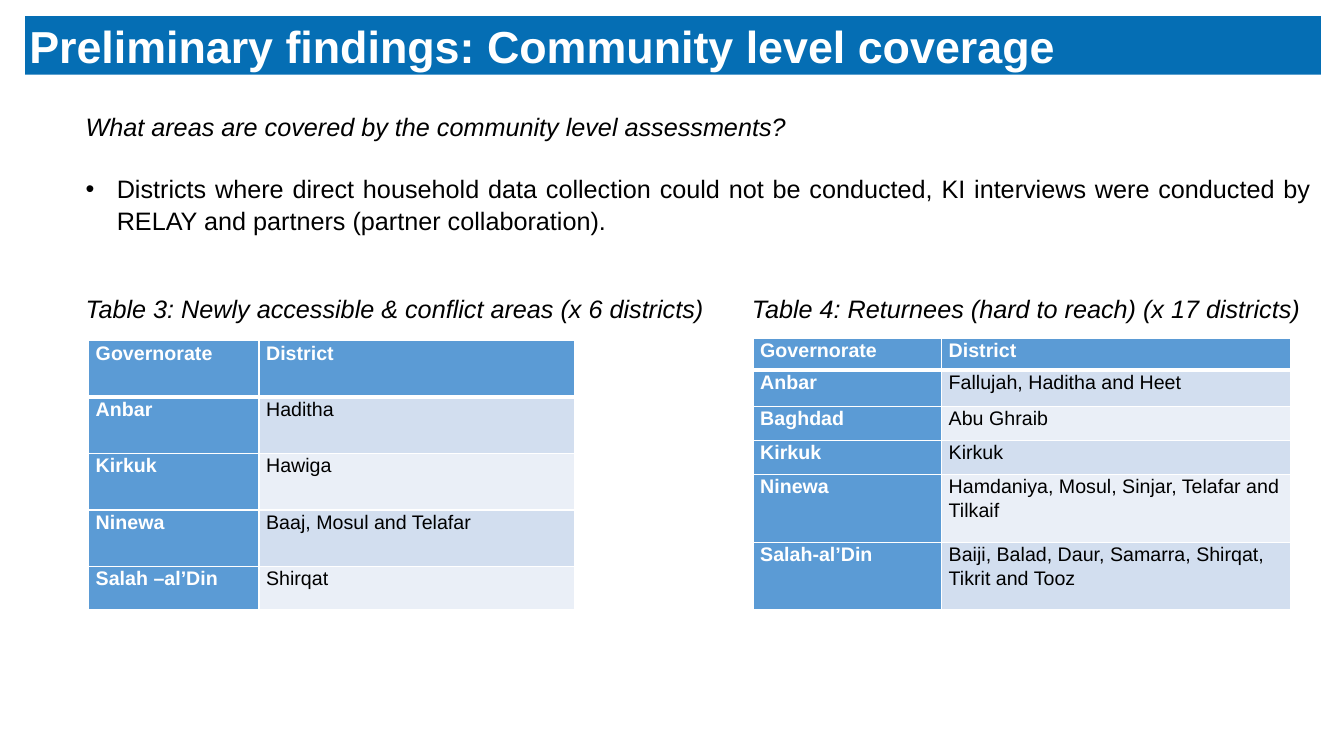
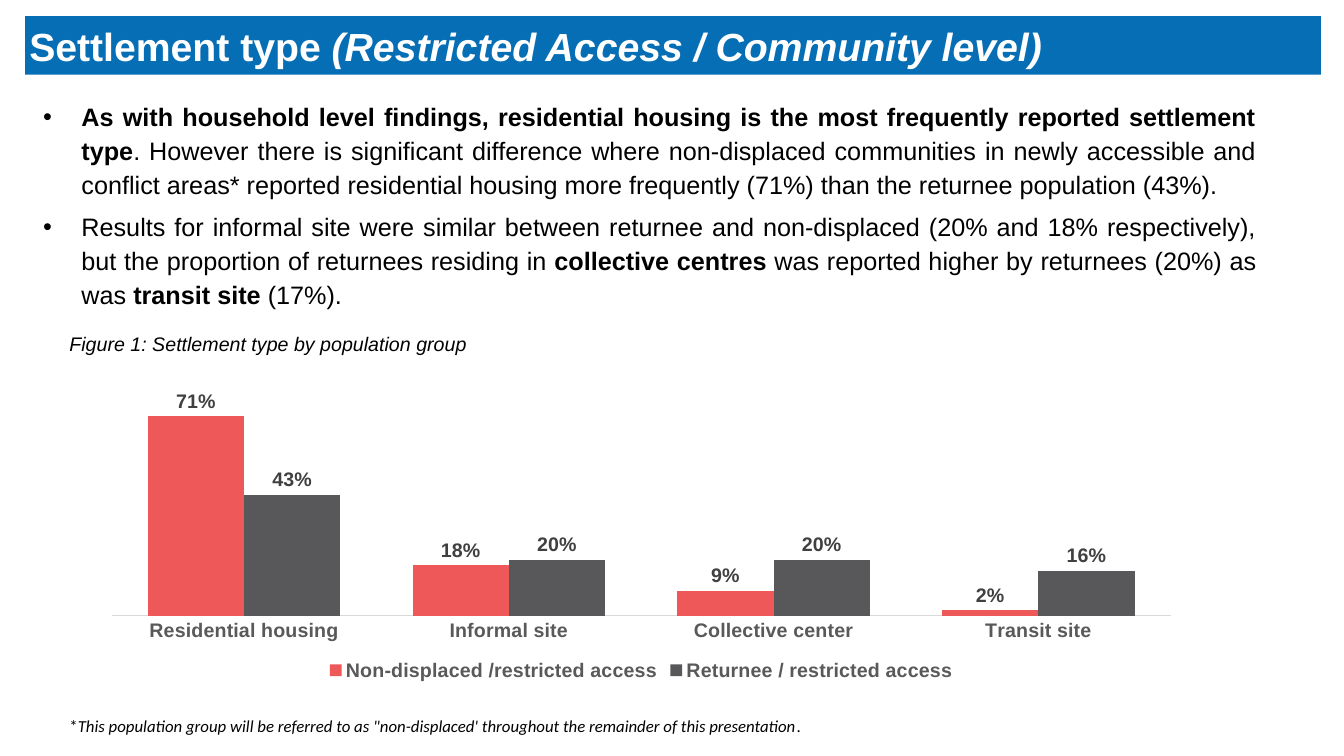
"""Build two slides on community level coverage and settlement type."""
from lxml.etree import SubElement
from pptx import Presentation
from pptx.chart.data import CategoryChartData
from pptx.dml.color import RGBColor
from pptx.enum.chart import XL_CHART_TYPE, XL_LABEL_POSITION, XL_LEGEND_POSITION, XL_TICK_MARK
from pptx.enum.shapes import MSO_SHAPE
from pptx.enum.text import MSO_ANCHOR, PP_ALIGN
from pptx.oxml.ns import qn
from pptx.util import Inches, Pt

FONT = "Arial"
BLACK, WHITE = "000000", "FFFFFF"
TITLE_BLUE, TABLE_BLUE = "056EB4", "5B9BD5"
BAND_FILLS = ("EAEFF7", "D2DEEF")
rgb = RGBColor.from_string


def add_title_slide(presentation, size, title_runs):
    slide = presentation.slides.add_slide(presentation.slide_layouts[6])
    band = slide.shapes.add_shape(
        MSO_SHAPE.RECTANGLE, Inches(0.25), Inches(0.16), Inches(12.85), Inches(0.58))
    band.shadow.inherit = False
    band.fill.solid()
    band.fill.fore_color.rgb = rgb(TITLE_BLUE)
    band.line.fill.background()
    frame = band.text_frame
    frame.margin_left = Inches(0.04)
    frame.margin_top = frame.margin_right = frame.margin_bottom = 0
    frame.vertical_anchor = MSO_ANCHOR.MIDDLE
    paragraph = frame.paragraphs[0]
    paragraph.alignment = PP_ALIGN.LEFT
    font = paragraph.font
    font.name, font.size, font.bold = FONT, Pt(size), True
    font.color.rgb = rgb(WHITE)
    for text, italic in title_runs:
        run = paragraph.add_run()
        run.text = text
        if italic:
            run.font.italic = True
    return slide


def add_text(slide, box, paragraphs, size=18, name=FONT, italic=None, bullet_indent=None,
             spacing=None, after=0, align=PP_ALIGN.JUSTIFY):
    frame = slide.shapes.add_textbox(*map(Inches, box)).text_frame
    frame.word_wrap = True
    for index, runs in enumerate(paragraphs):
        paragraph = frame.add_paragraph() if index else frame.paragraphs[0]
        paragraph.alignment = align
        paragraph.line_spacing = spacing
        paragraph.space_after = Pt(after)
        font = paragraph.font
        font.name, font.size, font.italic = name, Pt(size), italic
        font.color.rgb = rgb(BLACK)
        for text, style in runs:
            run = paragraph.add_run()
            run.text = text
            if style:
                setattr(run.font, style, True)
        if bullet_indent:
            properties = paragraph._p.get_or_add_pPr()
            properties.set("marL", str(Inches(bullet_indent)))
            properties.set("indent", str(-Inches(bullet_indent)))
            SubElement(properties, qn("a:buFont"), typeface=FONT)
            SubElement(properties, qn("a:buChar"), char="•")


presentation = Presentation()
presentation.slide_width, presentation.slide_height = Inches(13.33), Inches(7.5)

slide = add_title_slide(
    presentation, 32, [("Preliminary findings: Community level coverage", False)])
add_text(slide, (0.75, 1.06, 12.35, 0.4),
         [[("What areas are covered by the community level assessments?", None)]], italic=True)
add_text(slide, (0.75, 1.66, 12.35, 0.7),
         [[("Districts where direct household data collection could not be conducted, KI "
            "interviews were conducted by RELAY and partners (partner collaboration).", None)]],
         bullet_indent=0.31, spacing=1.04)

tables = [
    ("Table 3: Newly accessible & conflict areas (x 6 districts)", (0.75, 2.86, 6.5, 0.4),
     (0.88, 3.38), (1.69, 3.13), (0.56, 0.56, 0.56, 0.56, 0.43),
     [("Governorate", "District"), ("Anbar", "Haditha"), ("Kirkuk", "Hawiga"),
      ("Ninewa", "Baaj, Mosul and Telafar"), ("Salah –al’Din", "Shirqat")]),
    ("Table 4: Returnees (hard to reach) (x 17 districts)", (7.36, 2.86, 5.9, 0.4),
     (7.47, 3.36), (1.87, 3.46), (0.31, 0.36, 0.34, 0.34, 0.67, 0.67),
     [("Governorate", "District"), ("Anbar", "Fallujah, Haditha and Heet"),
      ("Baghdad", "Abu Ghraib"), ("Kirkuk", "Kirkuk"),
      ("Ninewa", "Hamdaniya, Mosul, Sinjar, Telafar and Tilkaif"),
      ("Salah-al’Din", "Baiji, Balad, Daur, Samarra, Shirqat, Tikrit and Tooz")]),
]
for caption, caption_box, (left, top), widths, heights, rows in tables:
    add_text(slide, caption_box, [[(caption, None)]], italic=True, align=PP_ALIGN.LEFT)
    table = slide.shapes.add_table(
        len(rows), len(widths), Inches(left), Inches(top),
        Inches(sum(widths)), Inches(sum(heights))).table
    for column, width in zip(table.columns, widths):
        column.width = Inches(width)
    for row_index, (height, texts) in enumerate(zip(heights, rows)):
        table.rows[row_index].height = Inches(height)
        for column_index, text in enumerate(texts):
            is_heading = row_index == 0 or column_index == 0
            cell = table.cell(row_index, column_index)
            cell.margin_left = cell.margin_right = Inches(0.07)
            cell.margin_top = cell.margin_bottom = 0
            cell.text = text
            paragraph = cell.text_frame.paragraphs[0]
            paragraph.line_spacing = 1.07
            font = paragraph.font
            font.name, font.size, font.bold = FONT, Pt(14), is_heading
            font.color.rgb = rgb(WHITE if is_heading else BLACK)
            properties = cell._tc.get_or_add_tcPr()
            for side in "LRTB":
                under_header = (row_index, side) in ((0, "B"), (1, "T"))
                line = SubElement(properties, qn(f"a:ln{side}"),
                                  w=str(Pt(3 if under_header else 1)))
                SubElement(SubElement(line, qn("a:solidFill")), qn("a:srgbClr"), val=WHITE)
            cell.fill.solid()
            cell.fill.fore_color.rgb = rgb(TABLE_BLUE if is_heading else BAND_FILLS[row_index % 2])

slide = add_title_slide(presentation, 28, [
    ("Settlement type ", False), ("(Restricted Access / Community level)", True)])
add_text(slide, (0.33, 0.92, 12.23, 2.2), [
    [("As with household level findings, residential housing is the most frequently reported "
      "settlement type", "bold"),
     (". However there is significant difference where non-displaced communities in newly "
      "accessible and conflict areas* reported residential housing more frequently (71%) than "
      "the returnee population (43%).", None)],
    [("Results for informal site were similar between returnee and non-displaced (20% and 18% "
      "respectively), but the proportion of returnees residing in ", None),
     ("collective centres ", "bold"),
     ("was reported higher by returnees (20%) as was ", None),
     ("transit site ", "bold"), ("(17%).", None)],
], bullet_indent=0.38, spacing=1.12, after=6)
add_text(slide, (0.59, 3.24, 12.26, 0.34),
         [[("Figure 1: Settlement type by population group", None)]], size=14, italic=True)

chart_data = CategoryChartData(number_format="###0%")
chart_data.categories = ["Residential housing", "Informal site", "Collective center", "Transit site"]
chart_data.add_series("Non-displaced /restricted access", (0.71, 0.18, 0.09, 0.02))
chart_data.add_series("Returnee / restricted access", (0.43, 0.2, 0.2, 0.16))
chart = slide.shapes.add_chart(
    XL_CHART_TYPE.COLUMN_CLUSTERED, Inches(0.89), Inches(3.82), Inches(10.94), Inches(2.98),
    chart_data).chart
chart.has_title = False
chart.font.name, chart.font.size, chart.font.bold = FONT, Pt(14), True
chart.font.color.rgb = rgb("595959")
chart.has_legend = True
chart.legend.position = XL_LEGEND_POSITION.BOTTOM
chart.legend.include_in_layout = False
category_axis, value_axis = chart.category_axis, chart.value_axis
category_axis.major_tick_mark = XL_TICK_MARK.NONE
category_axis.format.line.color.rgb = rgb("D9D9D9")
category_axis.format.line.width = Pt(0.75)
value_axis.visible = False
value_axis.has_major_gridlines = False
value_axis.minimum_scale, value_axis.maximum_scale = 0, 0.8
plot = chart.plots[0]
plot.gap_width, plot.overlap, plot.vary_by_categories = 75, 0, False
for series, color in zip(plot.series, ("EE5859", "58585A")):
    series.format.fill.solid()
    series.format.fill.fore_color.rgb = rgb(color)
    labels = series.data_labels
    labels.show_value = True
    labels.position = XL_LABEL_POSITION.OUTSIDE_END
    labels.number_format, labels.number_format_is_linked = "###0%", False
    labels.font.name, labels.font.size, labels.font.bold = FONT, Pt(14), True
    labels.font.color.rgb = rgb("404040")

add_text(slide, (0.59, 7.05, 12.11, 0.3), [
    [("*", None),
     ("This population group will be referred to as \"non-displaced' throughout the remainder "
      "of this presentation", "italic"),
     (".", None)],
], size=12, name="Calibri", align=PP_ALIGN.LEFT)

presentation.save("out.pptx")
